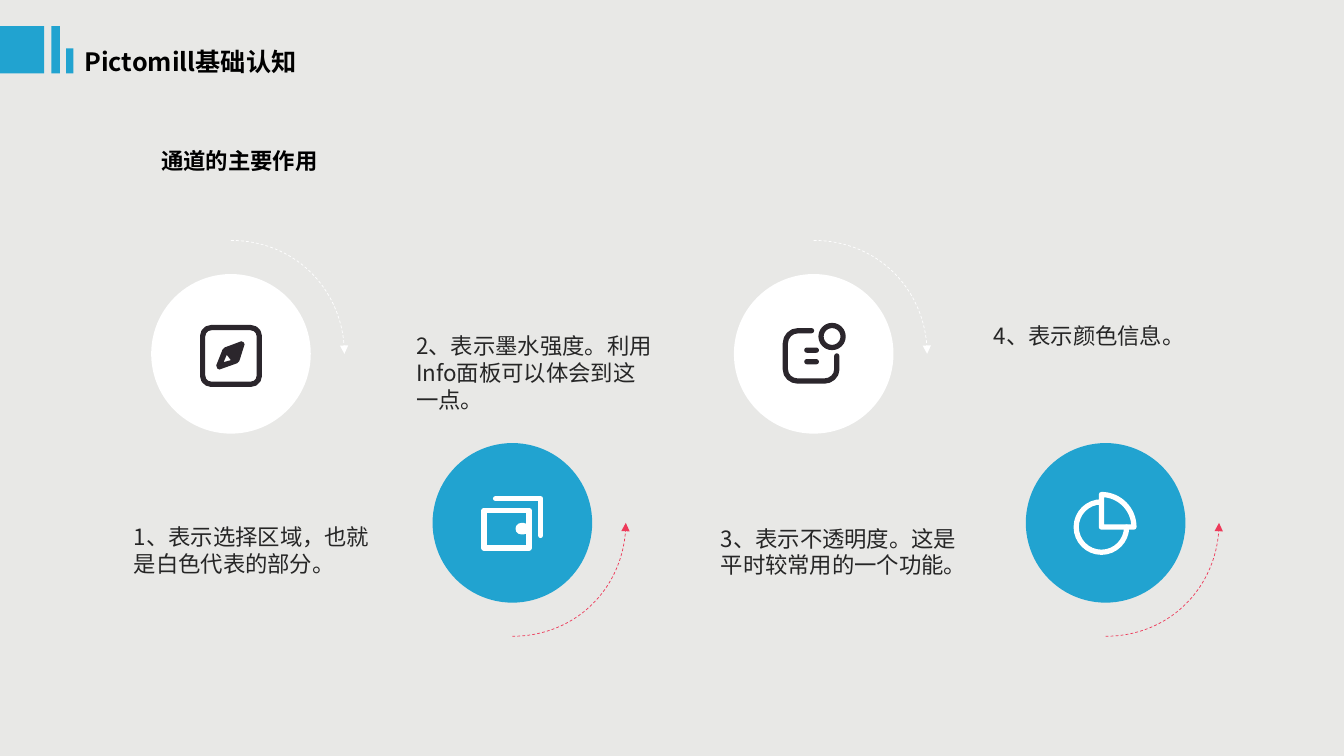
from lxml.etree import SubElement
from pptx import Presentation
from pptx.dml.color import RGBColor
from pptx.enum.dml import MSO_LINE
from pptx.enum.shapes import MSO_SHAPE
from pptx.enum.text import MSO_AUTO_SIZE
from pptx.oxml.ns import qn
from pptx.util import Emu, Pt

EMU_PER_PX = 9525
FONT = "Noto Sans CJK SC"
COLORS = {
    "background": "E8E8E6", "blue": "21A3D0", "white": "FFFFFF",
    "red": "ED3A5A", "icon": "2B262C", "body": "262626", "title": "000000",
}
QUARTER_CURVE = 0.5523
STROKE = 5
DISC_RADIUS = 76
ARC_RADIUS = 108
UPPER_ROW, LOWER_ROW = 337, 498


def px(length):
    return Emu(round(length * EMU_PER_PX))


def rgb(name):
    return RGBColor.from_string(COLORS[name])


def style(shape, fill=None, line=None, width=STROKE):
    shape.shadow.inherit = False
    if fill:
        shape.fill.solid()
        shape.fill.fore_color.rgb = rgb(fill)
    else:
        shape.fill.background()
    if line:
        shape.line.color.rgb = rgb(line)
        shape.line.width = px(width)
        shape.line._get_or_add_ln().set("cap", "rnd")
    else:
        shape.line.fill.background()
    return shape


def add_preset(slide, kind, left, top, width, height, roundness=None, **look):
    shape = slide.shapes.add_shape(kind, px(left), px(top), px(width), px(height))
    if roundness is not None:
        shape.adjustments[0] = roundness
    return style(shape, **look)


def add_outline(slide, start, steps, close=False, **look):
    """Draw from start; a step is (x, y) for a line or
    (corner_x, corner_y, x, y) for a quarter turn inside that corner."""
    points, current = [], start
    for step in steps:
        end = step[-2:]
        if len(step) == 4:
            corner = step[:2]
            points += [
                tuple(a + QUARTER_CURVE * (c - a) for a, c in zip(anchor, corner))
                for anchor in (current, end)
            ]
        points.append(end)
        current = end
    builder = slide.shapes.build_freeform(px(start[0]), px(start[1]), scale=1.0)
    builder.add_line_segments([(px(x), px(y)) for x, y in points], close=close)
    shape = builder.convert_to_shape()

    segments = iter(list(shape._element.iter(qn("a:lnTo"))))
    for step in steps:
        segment = next(segments)
        if len(step) == 4:
            segment.tag = qn("a:cubicBezTo")
            for _ in range(2):
                extra = next(segments)
                segment.append(extra[0])
                extra.getparent().remove(extra)
    return style(shape, **look)


def add_disc(slide, center_x, center_y, color):
    add_preset(slide, MSO_SHAPE.OVAL, center_x - DISC_RADIUS, center_y - DISC_RADIUS,
               2 * DISC_RADIUS, 2 * DISC_RADIUS, fill=color)


def add_arc_arrow(slide, center_x, center_y, direction, color):
    """Quarter arc ending at the right; direction -1 starts above, 1 below."""
    start_y, right = center_y + direction * ARC_RADIUS, center_x + ARC_RADIUS
    arc = add_outline(slide, (center_x, start_y), [(right, start_y, right, center_y)],
                      line=color, width=0.67)
    arc.line.dash_style = MSO_LINE.DASH
    line = arc.line._get_or_add_ln()
    line.set("cap", "flat")
    SubElement(line, qn("a:tailEnd"), type="triangle")


def add_text(slide, text, left, top, width, height, size=16, color="body", bold=False):
    box = slide.shapes.add_textbox(px(left), px(top), px(width), px(height))
    frame = box.text_frame
    frame.word_wrap = True
    frame.auto_size = MSO_AUTO_SIZE.SHAPE_TO_FIT_TEXT
    paragraph = frame.paragraphs[0]
    paragraph.text = text
    font = paragraph.font
    font.name, font.size, font.bold = FONT, Pt(size), bold
    font.color.rgb = rgb(color)
    SubElement(font._element, qn("a:ea"), typeface=FONT)


def add_compass_icon(slide):
    add_preset(slide, MSO_SHAPE.ROUNDED_RECTANGLE, 193, 312, 54, 54, 0.15, line="icon")
    needle = slide.shapes.build_freeform(230, 325, scale=EMU_PER_PX)
    needle.add_line_segments([(214, 331), (212, 333), (206, 348), (207, 351), (209, 352),
                              (226, 346), (228, 344), (233, 328), (232, 326)])
    needle.move_to(213, 345)
    needle.add_line_segments([(216, 338), (220, 343)])
    style(needle.convert_to_shape(), fill="icon")


def add_note_icon(slide):
    add_outline(slide, (773, 315), [
        (760, 315), (748, 315, 748, 327), (748, 352), (748, 363, 760, 363),
        (785, 363), (797, 363, 797, 352), (797, 339)], line="icon")
    add_preset(slide, MSO_SHAPE.OVAL, 782, 310, 21, 21, line="icon")
    for top in (331, 342):
        add_preset(slide, MSO_SHAPE.ROUNDED_RECTANGLE, 766, top, 14, 5, 0.5, fill="icon")


def add_wallet_icon(slide):
    add_preset(slide, MSO_SHAPE.RECTANGLE, 461, 486, 43, 36, line="white")
    add_preset(slide, MSO_SHAPE.ROUNDED_RECTANGLE, 491, 498, 13, 11, 0.5, fill="white")
    add_outline(slide, (472, 475), [(515, 475), (515, 510)], line="white")


def add_pie_icon(slide):
    add_outline(slide, (1073, 502), [
        (1073, 526, 1049, 526), (1025, 526, 1025, 502), (1025, 478, 1049, 478)],
        line="white")
    add_outline(slide, (1049, 502), [(1049, 471), (1080, 471, 1080, 502)],
                close=True, line="white")


def main():
    presentation = Presentation()
    presentation.slide_width, presentation.slide_height = px(1280), px(720)
    slide = presentation.slides.add_slide(presentation.slide_layouts[6])
    slide.background.fill.solid()
    slide.background.fill.fore_color.rgb = rgb("background")

    for left, top, width, height in ((-1, 25, 43, 45), (49, 25, 8, 45), (63, 46, 7, 24)):
        add_preset(slide, MSO_SHAPE.RECTANGLE, left, top, width, height, fill="blue")
    add_text(slide, "Pictomill基础认知", 71, 39, 260, 38, 18, "title", True)
    add_text(slide, "通道的主要作用", 144, 135, 534, 36, 16, "title", True)

    for center_x in (220, 775):
        add_disc(slide, center_x, UPPER_ROW, "white")
        add_arc_arrow(slide, center_x, UPPER_ROW, -1, "white")
    for center_x in (488, 1053):
        add_disc(slide, center_x, LOWER_ROW, "blue")
        add_arc_arrow(slide, center_x, LOWER_ROW, 1, "red")

    add_compass_icon(slide)
    add_wallet_icon(slide)
    add_note_icon(slide)
    add_pie_icon(slide)

    for text, left, top, height in (
        ("1、表示选择区域，也就是白色代表的部分。", 118, 494, 61),
        ("2、表示墨水强度。利用Info面板可以体会到这一点。", 387, 312, 87),
        ("3、表示不透明度。这是平时较常用的一个功能。", 677, 495, 87),
        ("4、表示颜色信息。", 937, 302, 36),
    ):
        add_text(slide, text, left, top, 245, height)

    presentation.save("out.pptx")


if __name__ == "__main__":
    main()
